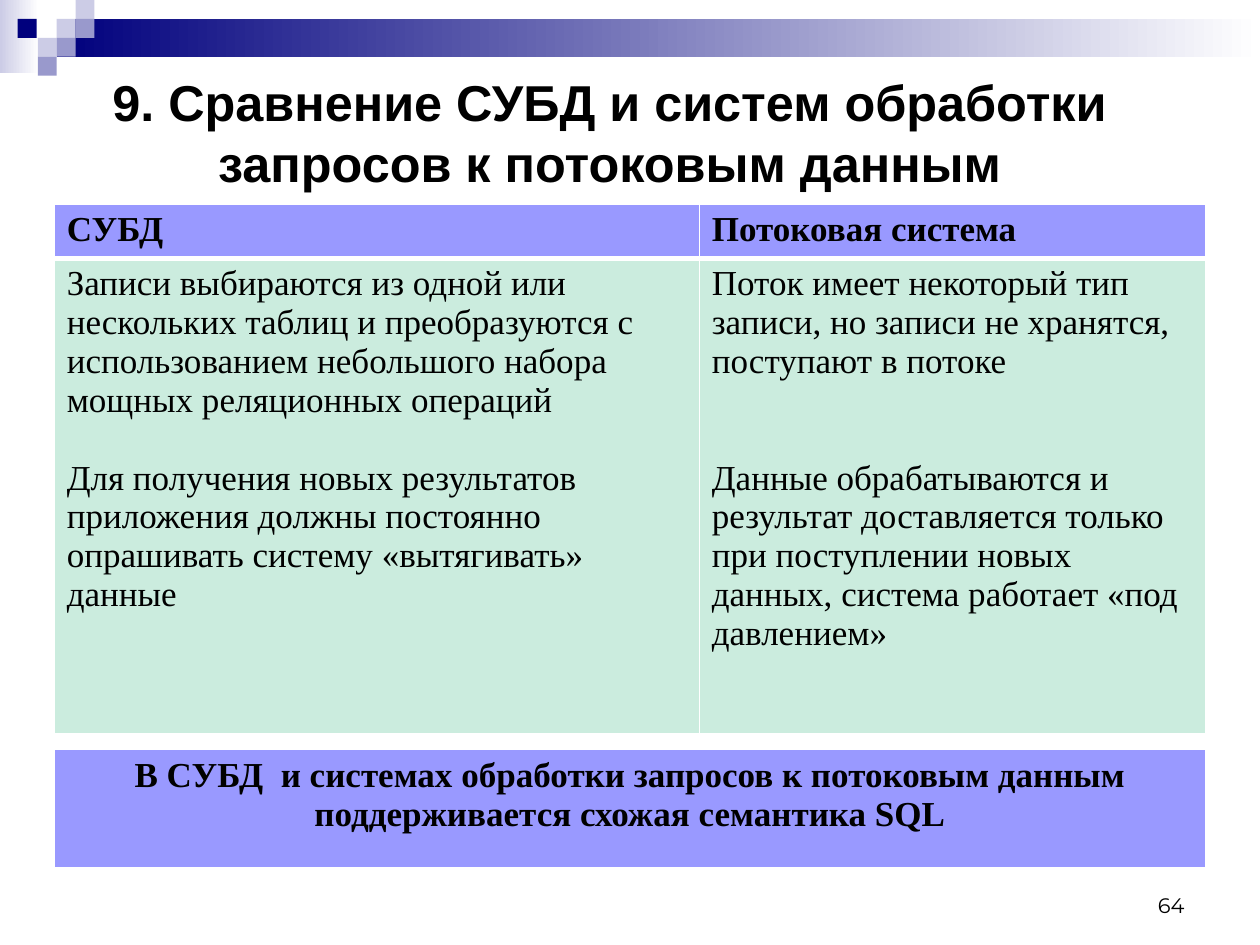
import pptx
import pptx.dml.color
import pptx.enum.shapes
import pptx.enum.text
import pptx.oxml
import pptx.oxml.ns
import pptx.util

Inches = pptx.util.Inches
Pt = pptx.util.Pt
ALIGN = pptx.enum.text.PP_ALIGN
ANCHOR = pptx.enum.text.MSO_ANCHOR

THEME = {
    "navy": "00007D", "violet": "9999CC", "lilac": "CCCCE6", "white": "FFFFFF",
    "ink": "000000", "header": "9999FF", "body": "CBECDE",
    "title_font": "Arial", "table_font": "Times New Roman", "number_font": "Montserrat",
    "title_size": 28.8, "table_size": 20, "number_size": 12,
    "thin": 1, "thick": 3,
}

TITLE = "9. Сравнение СУБД и систем обработки запросов к потоковым данным"
HEADERS = ["СУБД", "Потоковая система"]
# Each cell: (text, empty lines above it)
COMPARISON = [
    [("Записи выбираются из одной или нескольких таблиц и преобразуются "
      "с использованием небольшого набора мощных реляционных операций", 0),
     ("Для получения новых результатов приложения должны постоянно "
      "опрашивать систему «вытягивать» данные", 1)],
    [("Поток имеет некоторый тип записи, но записи не хранятся, "
      "поступают в потоке", 0),
     ("Данные обрабатываются и результат доставляется только при поступлении "
      "новых данных, система работает «под давлением»", 2)],
]
SUMMARY = ("В СУБД  и системах обработки запросов к потоковым данным "
           "поддерживается схожая семантика SQL")
PAGE_NUMBER = "64"

TABLE_LEFT = 0.43
LINE_PITCH = 22.2
SQUARE = 0.15
GRADIENT_BARS = [((0, 0, 0.31, 0.58), "lilac"), ((0.45, 0.15, 9.55, 0.3), "navy")]
SQUARES = [
    (0.45, 0.15, "lilac"), (0.6, 0, "lilac"), (0.6, 0.15, "violet"), (0.3, 0.3, "lilac"),
    (0.14, 0.15, "navy"), (0.45, 0.3, "violet"), (0.3, 0.45, "violet"),
]


def color(name):
    return pptx.dml.color.RGBColor.from_string(THEME[name])


def add_span(para, text, role, bold=False):
    span = para.add_run()
    span.text = text
    span.font.name = THEME[role + "_font"]
    span.font.size = Pt(THEME[role + "_size"])
    span.font.bold = bold
    span.font.color.rgb = color("ink")


def add_block(page, box):
    block = page.shapes.add_shape(
        pptx.enum.shapes.MSO_SHAPE.RECTANGLE, *map(Inches, box))
    block.shadow.inherit = False
    block.line.fill.background()
    return block


def add_decoration(page):
    for box, start in GRADIENT_BARS:
        fill = add_block(page, box).fill
        fill.gradient()
        fill.gradient_angle = 0
        for stop, name in zip(fill.gradient_stops, (start, "white")):
            stop.color.rgb = color(name)
    for left, top, name in SQUARES:
        fill = add_block(page, (left, top, SQUARE, SQUARE)).fill
        fill.solid()
        fill.fore_color.rgb = color(name)


def set_borders(cell, top, bottom):
    """Draw white cell borders; they must precede the fill in the cell XML."""
    properties = cell._tc.get_or_add_tcPr()
    thin = THEME["thin"]
    for index, (side, width) in enumerate(
            [("L", thin), ("R", thin), ("T", top), ("B", bottom)]):
        properties.insert(index, pptx.oxml.parse_xml(
            f'<a:ln{side} {pptx.oxml.ns.nsdecls("a")} w="{Pt(width)}"><a:solidFill>'
            f'<a:srgbClr val="{THEME["white"]}"/></a:solidFill></a:ln{side}>'))


def fill_cell(cell, paragraphs, header, align=ALIGN.LEFT):
    cell.fill.solid()
    cell.fill.fore_color.rgb = color("header" if header else "body")
    thin, thick = THEME["thin"], THEME["thick"]
    set_borders(cell, *((thin, thick) if header else (thick, thin)))
    for index, (text, gap) in enumerate(paragraphs):
        frame = cell.text_frame
        para = frame.add_paragraph() if index else frame.paragraphs[0]
        para.alignment = align
        if gap:
            para.space_before = Pt(gap * LINE_PITCH)
        add_span(para, text, "table", bold=header)


def add_grid(page, top, widths, heights):
    grid = page.shapes.add_table(
        len(heights), len(widths), Inches(TABLE_LEFT), Inches(top),
        Inches(sum(widths)), Inches(sum(heights))).table
    grid.first_row = grid.horz_banding = False
    for column, width in zip(grid.columns, widths):
        column.width = Inches(width)
    for row, height in zip(grid.rows, heights):
        row.height = Inches(height)
    return grid


def add_title(page):
    title = page.shapes.title
    title.left, title.top, title.width, title.height = map(Inches, (0.59, 0.63, 8.5, 0.83))
    frame = title.text_frame
    frame.word_wrap = True
    frame.auto_size = pptx.enum.text.MSO_AUTO_SIZE.NONE
    frame.vertical_anchor = ANCHOR.MIDDLE
    frame.paragraphs[0].alignment = ALIGN.CENTER
    add_span(frame.paragraphs[0], TITLE, "title", bold=True)


def add_page_number(page):
    box = page.shapes.add_textbox(*map(Inches, (7.17, 6.83, 2.33, 0.5)))
    frame = box.text_frame
    frame.word_wrap = True
    frame.vertical_anchor = ANCHOR.BOTTOM
    frame.paragraphs[0].alignment = ALIGN.RIGHT
    add_span(frame.paragraphs[0], PAGE_NUMBER, "number")


def main():
    deck = pptx.Presentation()
    deck.slide_width, deck.slide_height = Inches(10), Inches(7.5)
    page = deck.slides.add_slide(deck.slide_layouts.get_by_name("Title Only"))
    add_decoration(page)
    add_title(page)

    comparison = add_grid(page, 1.62, [5.12, 4.02], [0.43, 3.77])
    for column, (heading, paragraphs) in enumerate(zip(HEADERS, COMPARISON)):
        fill_cell(comparison.cell(0, column), [(heading, 0)], header=True)
        fill_cell(comparison.cell(1, column), paragraphs, header=False)

    summary = add_grid(page, 5.95, [9.14], [0.95])
    fill_cell(summary.cell(0, 0), [(SUMMARY, 0)], header=True, align=ALIGN.CENTER)
    add_page_number(page)
    deck.save("out.pptx")


if __name__ == "__main__":
    main()
